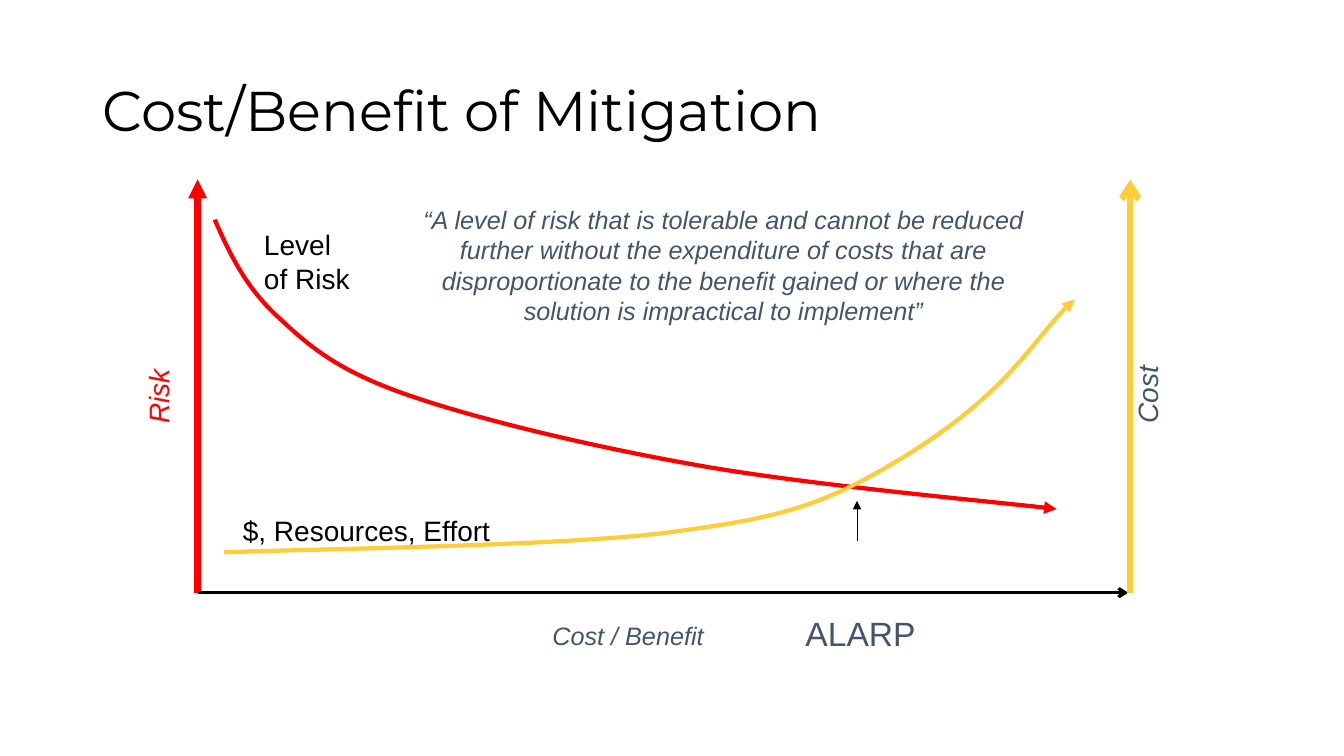
from dataclasses import dataclass

from lxml import etree
from pptx import Presentation
from pptx.dml.color import RGBColor
from pptx.enum.shapes import MSO_CONNECTOR
from pptx.enum.text import MSO_ANCHOR, MSO_AUTO_SIZE, PP_ALIGN
from pptx.oxml.ns import qn
from pptx.util import Inches, Pt

STRAIGHT = MSO_CONNECTOR.STRAIGHT
LEFT, CENTER = PP_ALIGN.LEFT, PP_ALIGN.CENTER
TOP, MIDDLE = MSO_ANCHOR.TOP, MSO_ANCHOR.MIDDLE
GROW = MSO_AUTO_SIZE.SHAPE_TO_FIT_TEXT


@dataclass(frozen=True)
class Theme:
    black: str = "000000"
    risk: str = "FF0000"
    cost: str = "FFCC3A"
    slate: str = "44546A"
    heading_font: str = "Montserrat"
    body_font: str = "Arial"
    title: int = 40
    callout: int = 24
    label: int = 20
    note: int = 18
    axis: float = 4.5
    curve: float = 3
    baseline: float = 2.25
    pointer: float = 0.75


class SlideBuilder:
    def __init__(self, slide, theme):
        self.shapes = slide.shapes
        self.theme = theme

    def text(self, wording, box, size=None, color=None, font=None, italic=False,
             align=LEFT, anchor=TOP, upward=False, grow=True, spacing=None):
        """Place text in box (left, top, width, height); upward text reads bottom to top."""
        textbox = self.shapes.add_textbox(*map(Inches, box))
        frame = textbox.text_frame
        frame.word_wrap = True
        frame.vertical_anchor = anchor
        if grow:
            frame.auto_size = GROW
        if upward:
            textbox.rotation = 180
            frame._txBody.bodyPr.set("vert", "eaVert")
        paragraph = frame.paragraphs[0]
        paragraph.text = wording
        paragraph.alignment = align
        if spacing:
            paragraph.line_spacing = spacing
        for run in paragraph.runs:
            run.font.name = font or self.theme.body_font
            run.font.size = Pt(size or self.theme.label)
            run.font.italic = italic
            run.font.color.rgb = RGBColor.from_string(color or self.theme.black)

    def stroke(self, line, color, width, arrowhead):
        """Format a line and put an arrowhead at its far end."""
        line.width = Pt(width)
        line.color.rgb = RGBColor.from_string(color)
        etree.SubElement(line._get_or_add_ln(), qn("a:tailEnd"), type=arrowhead)

    def arrow(self, start, end, color, width, arrowhead="triangle"):
        connector = self.shapes.add_connector(STRAIGHT, *map(Inches, start + end))
        self.stroke(connector.line, color, width, arrowhead)
        etree.SubElement(connector._element.spPr, qn("a:effectLst"))

    def curve(self, points, color):
        """Draw cubic Béziers: a start point, then two controls and an end for each."""
        start, *rest = [(Inches(x), Inches(y)) for x, y in points]
        builder = self.shapes.build_freeform(*start)
        builder.add_line_segments(rest, close=False)
        shape = builder.convert_to_shape()
        shape.shadow.inherit = False
        shape.fill.background()
        self.stroke(shape.line, color, self.theme.curve, "triangle")
        path = next(shape._element.iter(qn("a:path")))
        segments = path.findall(qn("a:lnTo"))
        for i in range(0, len(segments), 3):
            bezier = etree.SubElement(path, qn("a:cubicBezTo"))
            for segment in segments[i:i + 3]:
                bezier.append(segment[0])
                path.remove(segment)


def main():
    presentation = Presentation()
    presentation.slide_width, presentation.slide_height = Inches(13.33), Inches(7.5)
    slide = presentation.slides.add_slide(presentation.slide_layouts[6])
    theme = Theme()
    chart = SlideBuilder(slide, theme)

    risk_x, cost_x, axis_top, axis_bottom = 1.96, 11.21, 1.78, 5.88

    chart.text("Cost/Benefit of Mitigation", (0.92, 0.4, 11.5, 1.45), size=theme.title,
               font=theme.heading_font, anchor=MIDDLE, grow=False, spacing=0.9)

    chart.arrow((risk_x, axis_bottom), (risk_x, axis_top), theme.risk, theme.axis)
    chart.arrow((risk_x, axis_bottom), (11.19, axis_bottom), theme.black,
                theme.baseline, "arrow")
    for name, left, color in (("Risk", 1.35, theme.risk), ("Cost", 11.16, theme.slate)):
        chart.text(name, (left, 2.96, 0.54, 1.34), color=color, italic=True,
                   align=CENTER, upward=True)
    chart.text("Cost / Benefit", (4.78, 6.11, 2.9, 0.4), size=theme.note,
               color=theme.slate, italic=True, align=CENTER)
    chart.text("ALARP", (7.77, 6.03, 1.53, 0.5), size=theme.callout,
               color=theme.slate, align=CENTER)

    chart.curve([(2.13, 2.18),
                 (2.27, 2.5), (2.42, 2.82), (2.72, 3.11),
                 (3.03, 3.4), (3.29, 3.65), (3.99, 3.9),
                 (4.69, 4.15), (5.86, 4.43), (6.94, 4.62),
                 (8.02, 4.81), (9.89, 4.98), (10.48, 5.05)], theme.risk)
    chart.curve([(2.22, 5.48),
                 (2.94, 5.45), (5.48, 5.42), (6.57, 5.29),
                 (7.65, 5.15), (8.06, 5.05), (8.75, 4.66),
                 (9.96, 3.97), (10.26, 3.32), (10.66, 2.97)], theme.cost)
    chart.arrow((8.5, 5.37), (8.5, 4.97), theme.black, theme.pointer)

    chart.text("“A level of risk that is tolerable and cannot be reduced further without "
               "the expenditure of costs that are disproportionate to the benefit gained "
               "or where the solution is impractical to implement”",
               (3.89, 1.98, 6.57, 1.3), size=theme.note, color=theme.slate,
               italic=True, align=CENTER)
    chart.text("Level\vof Risk", (2.52, 2.21, 1.54, 0.77))
    chart.text("$, Resources, Effort", (2.31, 5.05, 3.11, 0.43))
    chart.arrow((cost_x, axis_bottom), (cost_x, axis_top), theme.cost, theme.axis, "arrow")

    presentation.save("out.pptx")


if __name__ == "__main__":
    main()
